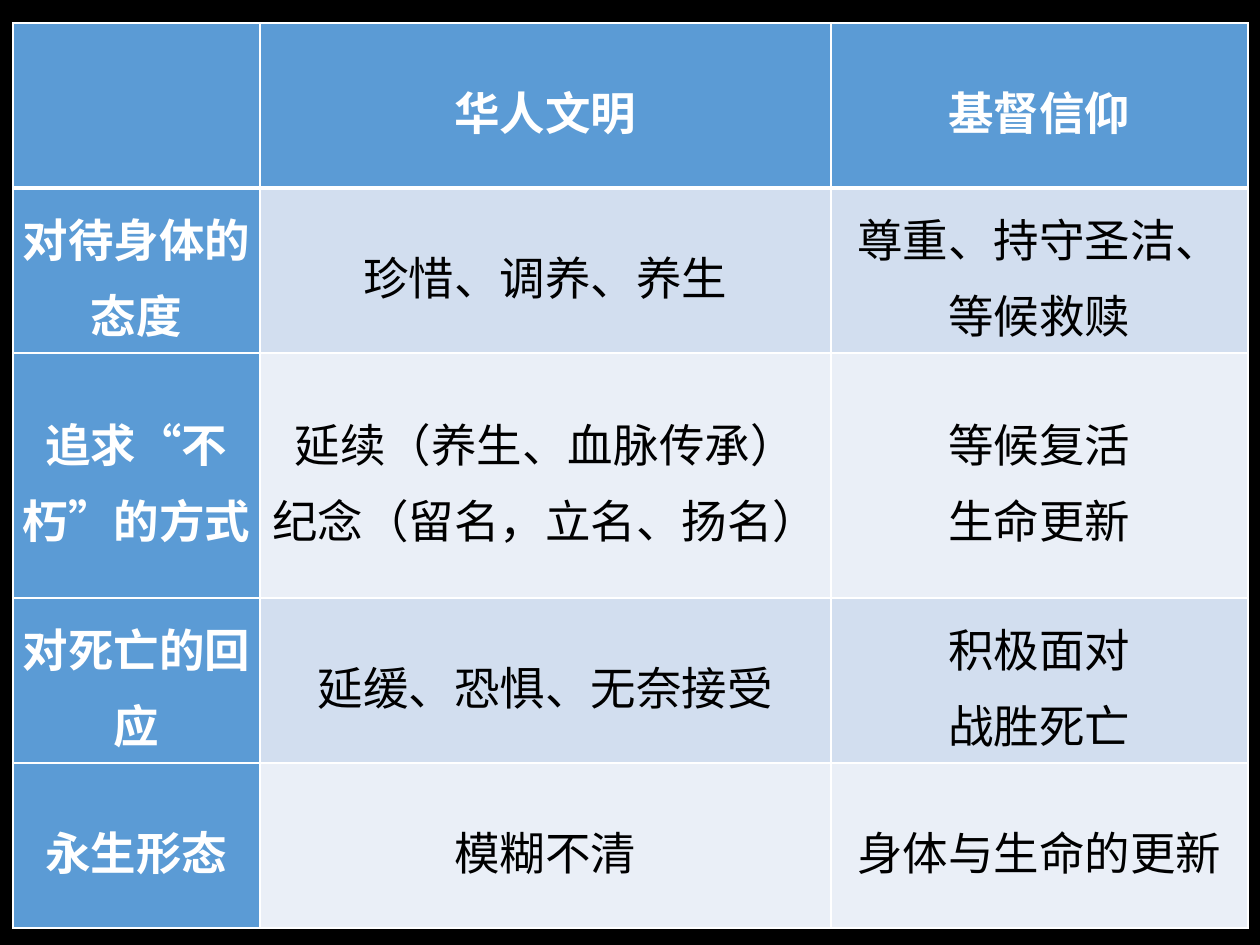
from dataclasses import dataclass

from lxml.etree import SubElement
from pptx import Presentation
from pptx.dml.color import RGBColor as Color
from pptx.enum.text import MSO_ANCHOR as Anchor, PP_ALIGN as Align
from pptx.oxml.ns import qn
from pptx.util import Emu, Pt

EMU_PER_PX = 914400 / 126


@dataclass(frozen=True)
class Theme:
    """Colours, type and line sizes of the slide."""
    background: str = "000000"
    header: str = "5B9BD5"
    bands: tuple = ("D2DEEF", "EAEFF7")
    header_text: str = "FFFFFF"
    body_text: str = "000000"
    border: str = "FFFFFF"
    font: str = "Noto Sans CJK SC"
    size: int = 26
    line_spacing: float = 1.15
    thin: int = 1
    thick: int = 3


THEME = Theme()
COLUMN_WIDTHS = (247, 571, 417)
ROW_HEIGHTS = (165, 165, 245, 165, 165)
TABLE_BOX = (13, 23, sum(COLUMN_WIDTHS), sum(ROW_HEIGHTS))
COMPARISON = (
    ("", "华人文明", "基督信仰"),
    ("对待身体的态度", "珍惜、调养、养生", "尊重、持守圣洁、\n等候救赎"),
    ("追求“不朽”的方式", "延续（养生、血脉传承）\n纪念（留名，立名、扬名）", "等候复活\n生命更新"),
    ("对死亡的回应", "延缓、恐惧、无奈接受", "积极面对\n战胜死亡"),
    ("永生形态", "模糊不清", "身体与生命的更新"),
)


def px(length):
    """Turn a length in px into EMU."""
    return Emu(round(length * EMU_PER_PX))


def set_borders(cell, row):
    """Draw the four cell borders, thick between the header and the body."""
    properties = cell._tc.get_or_add_tcPr()
    widths = {"L": THEME.thin, "R": THEME.thin,
              "T": THEME.thick if row == 1 else THEME.thin,
              "B": THEME.thick if row == 0 else THEME.thin}
    for side, width in widths.items():
        line = SubElement(properties, qn(f"a:ln{side}"), w=str(Pt(width)))
        fill = SubElement(line, qn("a:solidFill"))
        SubElement(fill, qn("a:srgbClr"), val=THEME.border)


def format_text(cell, is_header):
    """Centre the cell text and style its runs."""
    cell.vertical_anchor = Anchor.MIDDLE
    cell.margin_left = cell.margin_right = px(1)
    cell.margin_top = cell.margin_bottom = px(1)
    for paragraph in cell.text_frame.paragraphs:
        paragraph.alignment = Align.CENTER
        paragraph.line_spacing = THEME.line_spacing
        for run in paragraph.runs:
            font = run.font
            font.size = Pt(THEME.size)
            font.bold = is_header
            font.color.rgb = Color.from_string(
                THEME.header_text if is_header else THEME.body_text)
            font.name = THEME.font
            SubElement(run._r.get_or_add_rPr(), qn("a:ea"), typeface=THEME.font)


def add_comparison_table(slide, box):
    """Place the comparison table in the given box."""
    shape = slide.shapes.add_table(
        len(ROW_HEIGHTS), len(COLUMN_WIDTHS), *map(px, box))
    table = shape.table
    for column, width in zip(table.columns, COLUMN_WIDTHS):
        column.width = px(width)
    for table_row, height in zip(table.rows, ROW_HEIGHTS):
        table_row.height = px(height)
    for row, texts in enumerate(COMPARISON):
        for column, text in enumerate(texts):
            cell = table.cell(row, column)
            is_header = row == 0 or column == 0
            cell.text_frame.text = text
            format_text(cell, is_header)
            set_borders(cell, row)
            cell.fill.solid()
            cell.fill.fore_color.rgb = Color.from_string(
                THEME.header if is_header else THEME.bands[(row - 1) % 2])


def main():
    """Build and save the presentation."""
    presentation = Presentation()
    presentation.slide_width, presentation.slide_height = px(1260), px(945)
    slide = presentation.slides.add_slide(presentation.slide_layouts[6])
    background = slide.background.fill
    background.solid()
    background.fore_color.rgb = Color.from_string(THEME.background)
    add_comparison_table(slide, TABLE_BOX)
    presentation.save("out.pptx")


if __name__ == "__main__":
    main()
